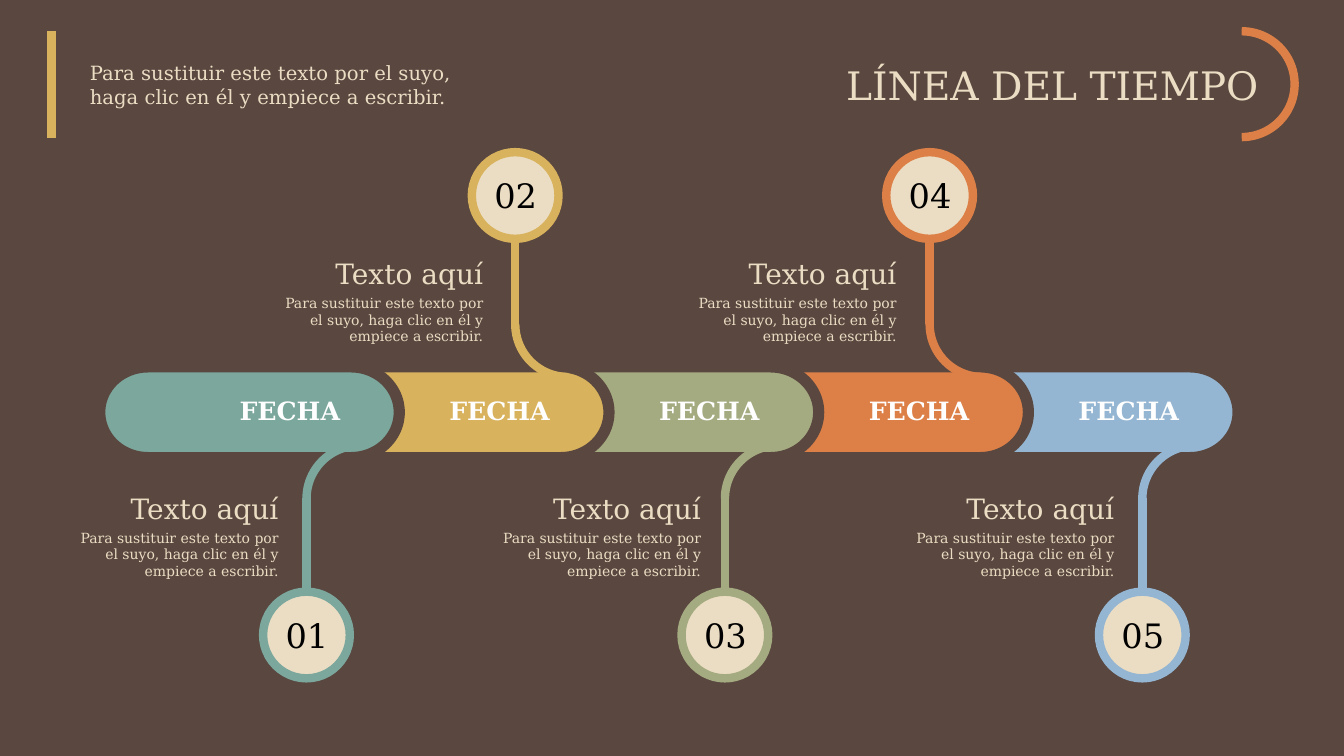
from lxml import etree
from pptx import Presentation
from pptx.dml.color import RGBColor
from pptx.enum.shapes import MSO_CONNECTOR, MSO_SHAPE
from pptx.enum.text import MSO_AUTO_SIZE, PP_ALIGN
from pptx.oxml.ns import qn
from pptx.util import Inches, Pt

FONT = "DejaVu Serif"
BROWN, CREAM, BLACK, WHITE = "594740", "EBDDC3", "000000", "FFFFFF"
GOLD, ORANGE = "D8B25C", "DD8047"

# Colour, stem position and right edge of the text for each stage
STAGES = [
    ("7BA79D", 3.04, 2.86),
    (GOLD, 5.11, 4.89),
    ("A5AB81", 7.19, 7.05),
    (ORANGE, 9.22, 8.99),
    ("94B6D2", 11.33, 11.15),
]
BAND_LEFT, BAND_TOP, BAND_STEP = 0.99, 3.64, 2.08
ARC_SIZE = 1.05
CIRCLE_SIZE = 0.86


def rgb(colour):
    return RGBColor.from_string(colour)


def write(shape, text, size, colour=CREAM, align=PP_ALIGN.LEFT, bold=False,
          margin_left=0.1, margin_right=0.1):
    frame = shape.text_frame
    frame.word_wrap = True
    frame.auto_size = MSO_AUTO_SIZE.SHAPE_TO_FIT_TEXT
    frame.margin_left = Inches(margin_left)
    frame.margin_right = Inches(margin_right)
    frame.text = text
    for para in frame.paragraphs:
        para.alignment = align
        for span in para.runs:
            span.font.name = FONT
            span.font.size = Pt(size)
            span.font.bold = bold
            span.font.color.rgb = rgb(colour)


def add_text(page, left, top, width, height, text, size, **options):
    box = page.shapes.add_textbox(Inches(left), Inches(top), Inches(width), Inches(height))
    write(box, text, size, **options)


def add_shape(page, kind, left, top, width, height, line, line_width=6, fill=None, rotation=0):
    shape = page.shapes.add_shape(kind, Inches(left), Inches(top), Inches(width), Inches(height))
    shape.shadow.inherit = False
    shape.rotation = rotation
    if fill:
        shape.fill.solid()
        shape.fill.fore_color.rgb = rgb(fill)
    else:
        shape.fill.background()
    shape.line.color.rgb = rgb(line)
    shape.line.width = Pt(line_width)


def add_arc(page, left, top, colour, rotation):
    """Draw a quarter circle: the top right one, turned clockwise by rotation."""
    add_shape(page, MSO_SHAPE.ARC, left, top, ARC_SIZE, ARC_SIZE, colour, rotation=rotation)


def add_vertical_line(page, left, start, end, colour):
    line = page.shapes.add_connector(
        MSO_CONNECTOR.STRAIGHT, Inches(left), Inches(start), Inches(left), Inches(end))
    line.line.color.rgb = rgb(colour)
    line.line.width = Pt(6)
    etree.SubElement(line._element.spPr, qn("a:effectLst"))


def add_header(page, top):
    title = page.shapes.title
    title.left, title.top = Inches(7.92), Inches(top + 0.25)
    title.width, title.height = Inches(5.41), Inches(0.57)
    write(title, "LÍNEA DEL TIEMPO", 28, align=PP_ALIGN.RIGHT, margin_right=0.85)
    add_text(page, 0, top + 0.25, 9.45, 0.57,
             "Para sustituir este texto por el suyo,\nhaga clic en él y empiece a escribir.",
             14, margin_left=0.89)
    for rotation in (0, 90):
        add_arc(page, 11.79, top, ORANGE, rotation)
    add_vertical_line(page, 0.51, top, top + 1.06, GOLD)


def add_band(page, left, top):
    """Draw the segments from right to left, so that each overlaps the next one."""
    for index, (colour, _, _) in reversed(list(enumerate(STAGES))):
        segment_left = left + index * BAND_STEP
        add_shape(page, MSO_SHAPE.FLOWCHART_TERMINATOR, segment_left, top, 2.97, 0.9,
                  BROWN, line_width=8, fill=colour)
        add_text(page, segment_left + 0.89, top + 0.23, 1.99, 0.4, "FECHA", 18,
                 colour=WHITE, align=PP_ALIGN.CENTER, bold=True)


def add_branch(page, number, colour, stem, text_right, upward):
    if upward:
        arc_top, rotation, circle_top, text_top = 2.69, 180, 1.51, 2.5
        stem_end = circle_top + CIRCLE_SIZE
    else:
        arc_top, rotation, circle_top, text_top = 4.42, 270, 5.87, 4.83
        stem_end = circle_top
    circle_left = stem - CIRCLE_SIZE / 2
    add_arc(page, stem, arc_top, colour, rotation)
    add_vertical_line(page, stem, arc_top + ARC_SIZE / 2, stem_end, colour)
    add_shape(page, MSO_SHAPE.OVAL, circle_left, circle_top, CIRCLE_SIZE, CIRCLE_SIZE,
              colour, fill=CREAM)
    add_text(page, circle_left + 0.03, circle_top + 0.18, 0.81, 0.5, f"{number:02}", 24,
             colour=BLACK, align=PP_ALIGN.CENTER)
    add_text(page, text_right - 2.35, text_top, 2.35, 0.43, "Texto aquí", 20,
             align=PP_ALIGN.RIGHT)
    add_text(page, text_right - 2.26, text_top + 0.37, 2.26, 0.6,
             "Para sustituir este texto por el suyo, haga clic en él y empiece a escribir.",
             10, align=PP_ALIGN.RIGHT)


def main():
    deck = Presentation()
    deck.slide_width, deck.slide_height = Inches(13.33), Inches(7.5)
    page = deck.slides.add_slide(deck.slide_layouts[5])
    page.background.fill.solid()
    page.background.fill.fore_color.rgb = rgb(BROWN)
    add_header(page, 0.31)
    add_band(page, BAND_LEFT, BAND_TOP)
    for number, (colour, stem, text_right) in enumerate(STAGES, start=1):
        add_branch(page, number, colour, stem, text_right, upward=number % 2 == 0)
    deck.save("out.pptx")


if __name__ == "__main__":
    main()
